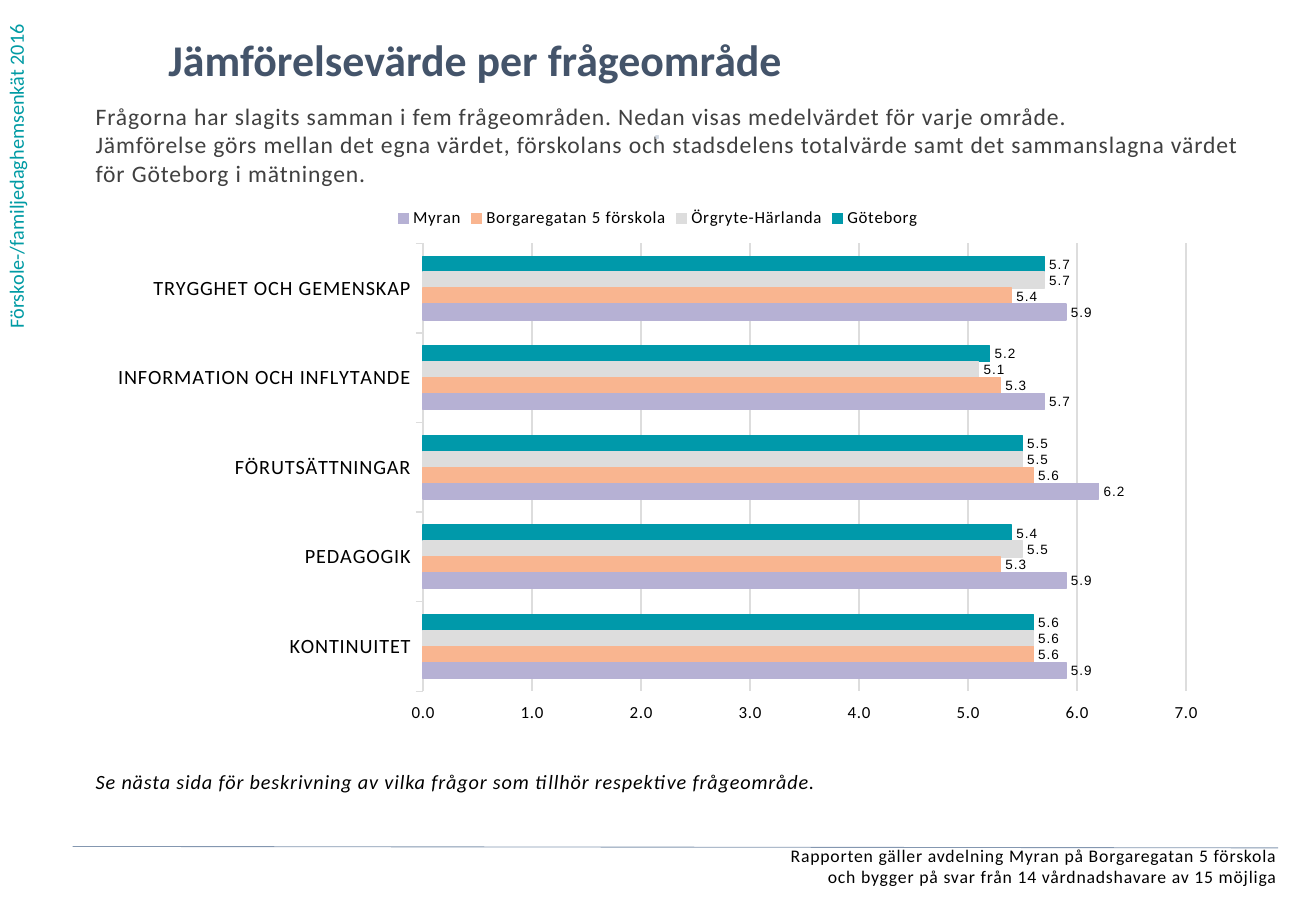
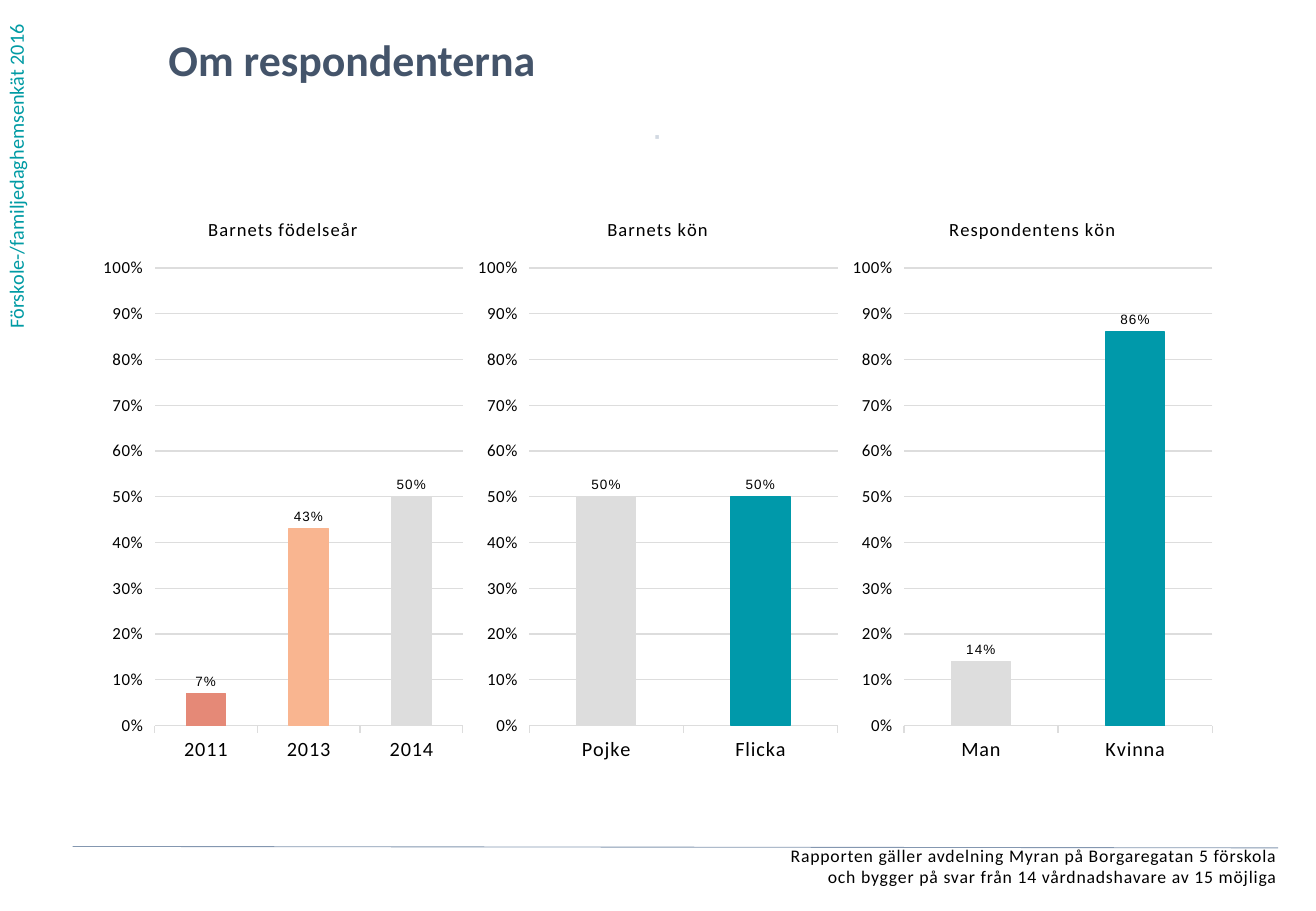
"""Build two survey report slides: comparison per question area and respondent profile."""
import pptx
import pptx.chart.data
import pptx.dml.color
import pptx.enum.chart
import pptx.enum.shapes
import pptx.enum.text
import pptx.oxml
import pptx.oxml.ns
import pptx.util

Cm = pptx.util.Cm
Pt = pptx.util.Pt
RGBColor = pptx.dml.color.RGBColor
ALIGN = pptx.enum.text.PP_ALIGN
CHART = pptx.enum.chart.XL_CHART_TYPE
qn = pptx.oxml.ns.qn

BLACK = RGBColor(0x00, 0x00, 0x00)
BODY = RGBColor(0x40, 0x40, 0x40)
NAVY = RGBColor(0x44, 0x54, 0x6A)
SIDE = RGBColor(0x00, 0x9B, 0xA4)
RULE = RGBColor(0x84, 0x97, 0xB0)
DOT = RGBColor(0xD2, 0xD9, 0xE2)
TEAL = RGBColor(0x00, 0x99, 0xAA)
GREY = RGBColor(0xDD, 0xDD, 0xDD)
PEACH = RGBColor(0xF9, 0xB5, 0x90)
LILAC = RGBColor(0xB6, 0xB1, 0xD4)
CORAL = RGBColor(0xE5, 0x89, 0x77)

FONT = "Calibri"
SPACING = "50"
LEFT, CHART_TOP, CHART_WIDTH = 2, 4.08, 23.5

SIDE_LABEL = "Förskole-/familjedaghemsenkät 2016"
FOOTER = ["Rapporten gäller avdelning Myran på Borgaregatan 5 förskola",
          "och bygger på svar från 14 vårdnadshavare av 15 möjliga"]

AREA_TITLE = "Jämförelsevärde per frågeområde"
AREA_INTRO = [
    "Frågorna har slagits samman i fem frågeområden. Nedan visas medelvärdet för varje område.",
    "Jämförelse görs mellan det egna värdet, förskolans och stadsdelens totalvärde "
    "samt det sammanslagna värdet för Göteborg i mätningen.",
]
AREA_NOTE = ["Se nästa sida för beskrivning av vilka frågor som tillhör respektive frågeområde."]
AREAS = ["TRYGGHET OCH GEMENSKAP", "INFORMATION OCH INFLYTANDE", "FÖRUTSÄTTNINGAR",
         "PEDAGOGIK", "KONTINUITET"]
AREA_SERIES = [
    ("Göteborg", TEAL, [5.7, 5.2, 5.5, 5.4, 5.6]),
    ("Örgryte-Härlanda", GREY, [5.7, 5.1, 5.5, 5.5, 5.6]),
    ("Borgaregatan 5 förskola", PEACH, [5.4, 5.3, 5.6, 5.3, 5.6]),
    ("Myran", LILAC, [5.9, 5.7, 6.2, 5.9, 5.9]),
]

RESPONDENT_TITLE = "Om respondenterna"
RESPONDENT_CHARTS = [
    ("Barnets födelseår", [("2014", 0.5, GREY), ("2013", 0.43, PEACH), ("2011", 0.07, CORAL)]),
    ("Barnets kön", [("Flicka", 0.5, TEAL), ("Pojke", 0.5, GREY)]),
    ("Respondentens kön", [("Kvinna", 0.86, TEAL), ("Man", 0.14, GREY)]),
]


def set_font(font, size, color=BLACK, name=FONT, bold=False, italic=False):
    font.size, font.name, font.bold, font.italic = Pt(size), name, bold, italic
    font.color.rgb = color


def add_text(slide, box, lines, size, color=BLACK, align=ALIGN.LEFT, spacing=SPACING,
             inset=0, **style):
    sp = slide.shapes.add_textbox(*map(Cm, box))
    tf = sp.text_frame
    tf.word_wrap = True
    if inset is not None:
        tf.margin_left = tf.margin_right = tf.margin_top = tf.margin_bottom = Cm(inset)
    for i, line in enumerate(lines):
        p = tf.add_paragraph() if i else tf.paragraphs[0]
        p.alignment = align
        r = p.add_run()
        r.text = line
        set_font(r.font, size, color, **style)
        r._r.get_or_add_rPr().set("spc", spacing)
    return sp


def add_side_label(slide, layout):
    sp = add_text(slide, (-0.05, 0, 1.02, 7.12), [SIDE_LABEL], 12, SIDE,
                  spacing="0", inset=None)
    sp.text_frame._txBody.bodyPr.set("vert", "vert270")
    layout.shapes.element.append(sp.element)


def add_slide(prs, layout, title, intro=()):
    slide = prs.slides.add_slide(layout)
    sp = slide.shapes.title
    sp.left, sp.top, sp.width, sp.height = map(Cm, (3.52, 0.69, 21.18, 1.45))
    tf = sp.text_frame
    tf.margin_left = tf.margin_right = tf.margin_top = tf.margin_bottom = 0
    tf.vertical_anchor = pptx.enum.text.MSO_ANCHOR.TOP
    p = tf.paragraphs[0]
    p.alignment = ALIGN.LEFT
    r = p.add_run()
    r.text = title
    set_font(r.font, 26, NAVY, bold=True)

    if intro:
        add_text(slide, (LEFT, 2.13, 24.03, 2.2), intro, 14, BODY)
    add_text(slide, (0.3, 17.66, 26.4, 1.09), FOOTER, 10.5, align=ALIGN.RIGHT)
    add_text(slide, (9.83, 2.59, 7.82, 0.99), ["⋅"], 12, DOT, ALIGN.CENTER, bold=True)
    rule = slide.shapes.add_connector(pptx.enum.shapes.MSO_CONNECTOR.STRAIGHT,
                                      *map(Cm, (1.52, 17.7, 26.72, 17.73)))
    rule.line.color.rgb, rule.line.width = RULE, Pt(0.5)
    rule.element.spPr.append(pptx.oxml.parse_xml(
        '<a:effectLst xmlns:a="http://schemas.openxmlformats.org/drawingml/2006/main"/>'))
    return slide


def paint(part, color):
    part.format.fill.solid()
    part.format.fill.fore_color.rgb = color
    part.format.line.color.rgb, part.format.line.width = color, Pt(0.75)


def add_bars(slide, kind, box, cats, series, top_value, step, number_format, title=None):
    data = pptx.chart.data.CategoryChartData()
    data.categories = cats
    for name, _, values in series:
        data.add_series(name, values)
    chart = slide.shapes.add_chart(kind, *map(Cm, box), data).chart
    set_font(chart.font, 10)

    plot = chart.plots[0]
    plot.gap_width, plot.overlap, plot.vary_by_categories = 162, 0, False
    for ser, (_, color, _) in zip(plot.series, series):
        ser.invert_if_negative = False
        paint(ser, color)
    plot.has_data_labels = True
    labels = plot.data_labels
    labels.show_value = True
    labels.position = pptx.enum.chart.XL_LABEL_POSITION.OUTSIDE_END
    labels.number_format, labels.number_format_is_linked = number_format, False
    set_font(labels.font, 8, name="Arial")

    cat = chart.category_axis
    cat.reverse_order = True
    cat.format.line.color.rgb, cat.format.line.width = GREY, Pt(0.75)
    set_font(cat.tick_labels.font, 12)

    val = chart.value_axis
    val.minimum_scale, val.maximum_scale, val.major_unit = 0, top_value, step
    val.tick_label_position = pptx.enum.chart.XL_TICK_LABEL_POSITION.HIGH
    val.format.line.fill.background()
    grid = val.major_gridlines.format.line
    grid.color.rgb, grid.width = GREY, Pt(0.75)
    ticks = val.tick_labels
    ticks.number_format, ticks.number_format_is_linked = number_format, False
    set_font(ticks.font, 10)

    chart.has_title = title is not None
    chart.has_legend = title is None
    if title:
        r = chart.chart_title.text_frame.paragraphs[0].add_run()
        r.text = title
        set_font(r.font, 11)
    else:
        chart.legend.position = pptx.enum.chart.XL_LEGEND_POSITION.TOP
        chart.legend.include_in_layout = False
        set_font(chart.legend.font, 10)
    for props in chart.element.iter(qn("a:defRPr"), qn("a:rPr")):
        props.set("spc", SPACING)
    return chart


def build_areas(prs, layout):
    slide = add_slide(prs, layout, AREA_TITLE, AREA_INTRO)
    add_side_label(slide, layout)
    add_text(slide, (LEFT, 16.08, CHART_WIDTH, 0.6), AREA_NOTE, 12, italic=True)
    add_bars(slide, CHART.BAR_CLUSTERED, (LEFT, CHART_TOP, CHART_WIDTH, 11.25),
             AREAS, AREA_SERIES, 7, 1, "0.0;0.0")


def build_respondents(prs, layout):
    slide = add_slide(prs, layout, RESPONDENT_TITLE)
    width = CHART_WIDTH / len(RESPONDENT_CHARTS)
    for i, (title, bars) in enumerate(RESPONDENT_CHARTS):
        cats, values, colors = zip(*bars)
        chart = add_bars(slide, CHART.COLUMN_CLUSTERED,
                         (LEFT + i * width, CHART_TOP, width, 12.09),
                         cats, [(title, TEAL, values)], 1, 0.1, "0%;0%", title)
        for j, color in enumerate(colors):
            paint(chart.plots[0].series[0].points[j], color)


def main():
    prs = pptx.Presentation()
    prs.slide_width, prs.slide_height = Cm(27.51), Cm(19.05)
    layout = prs.slide_layouts[5]
    build_areas(prs, layout)
    build_respondents(prs, layout)
    prs.save("out.pptx")


if __name__ == "__main__":
    main()
